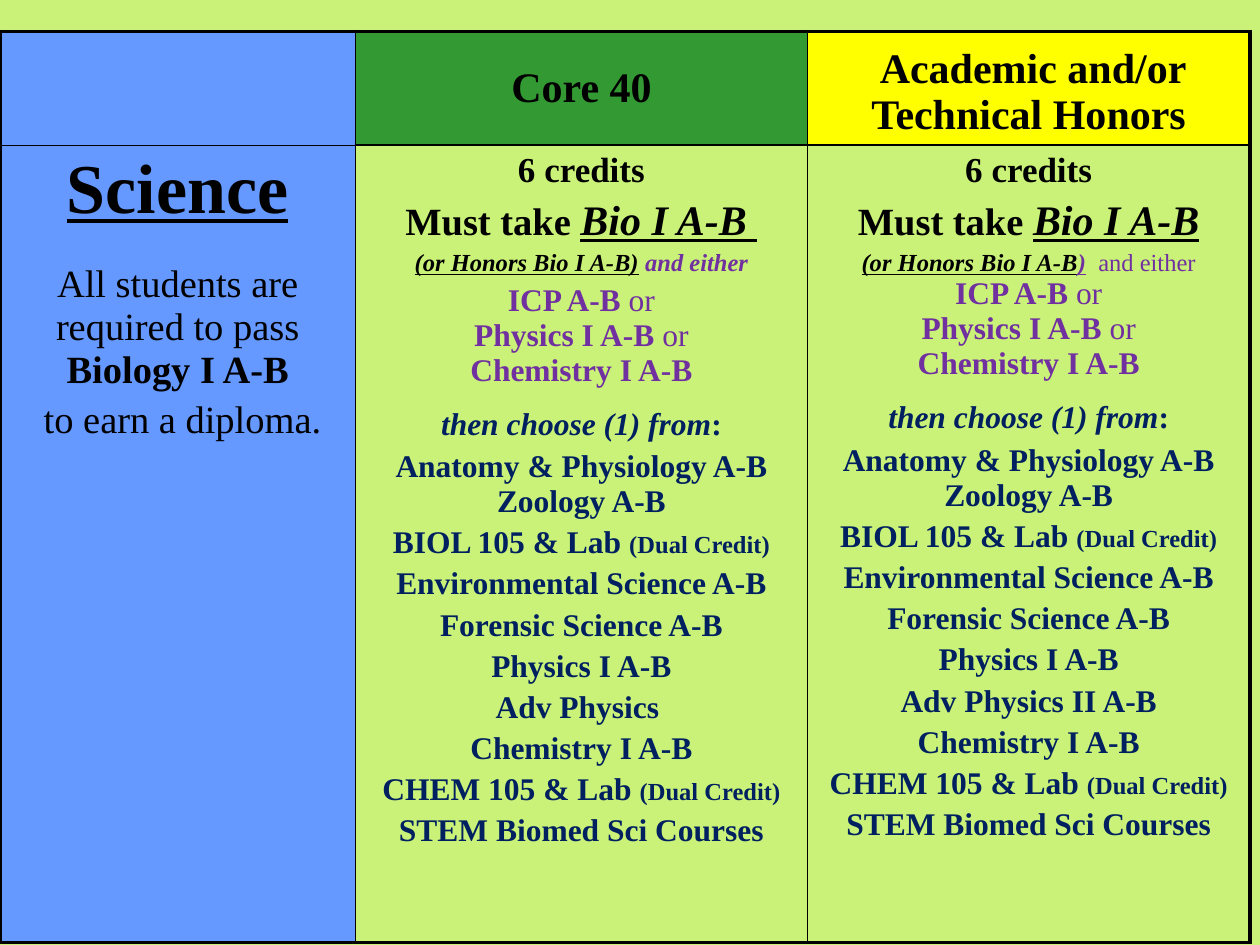
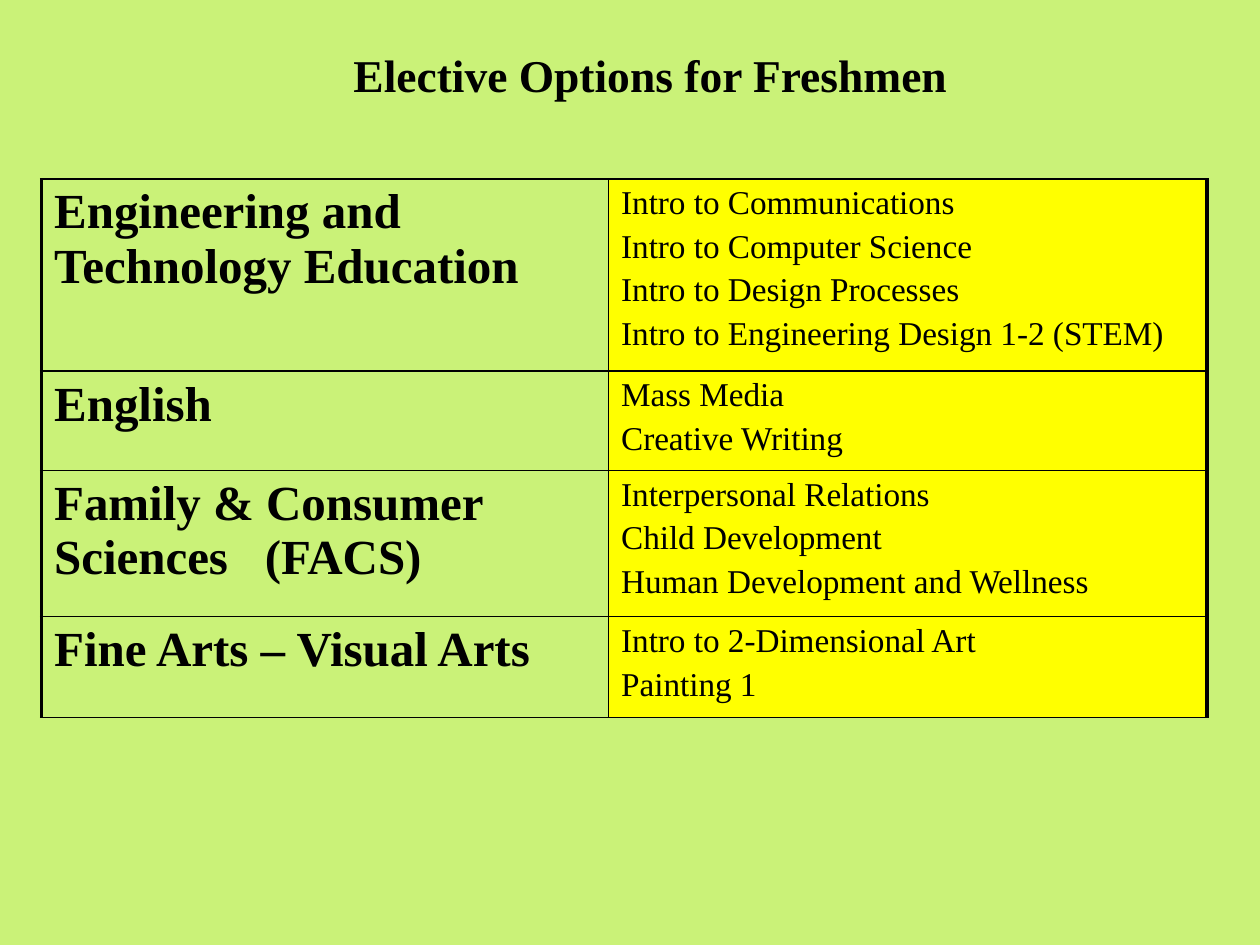
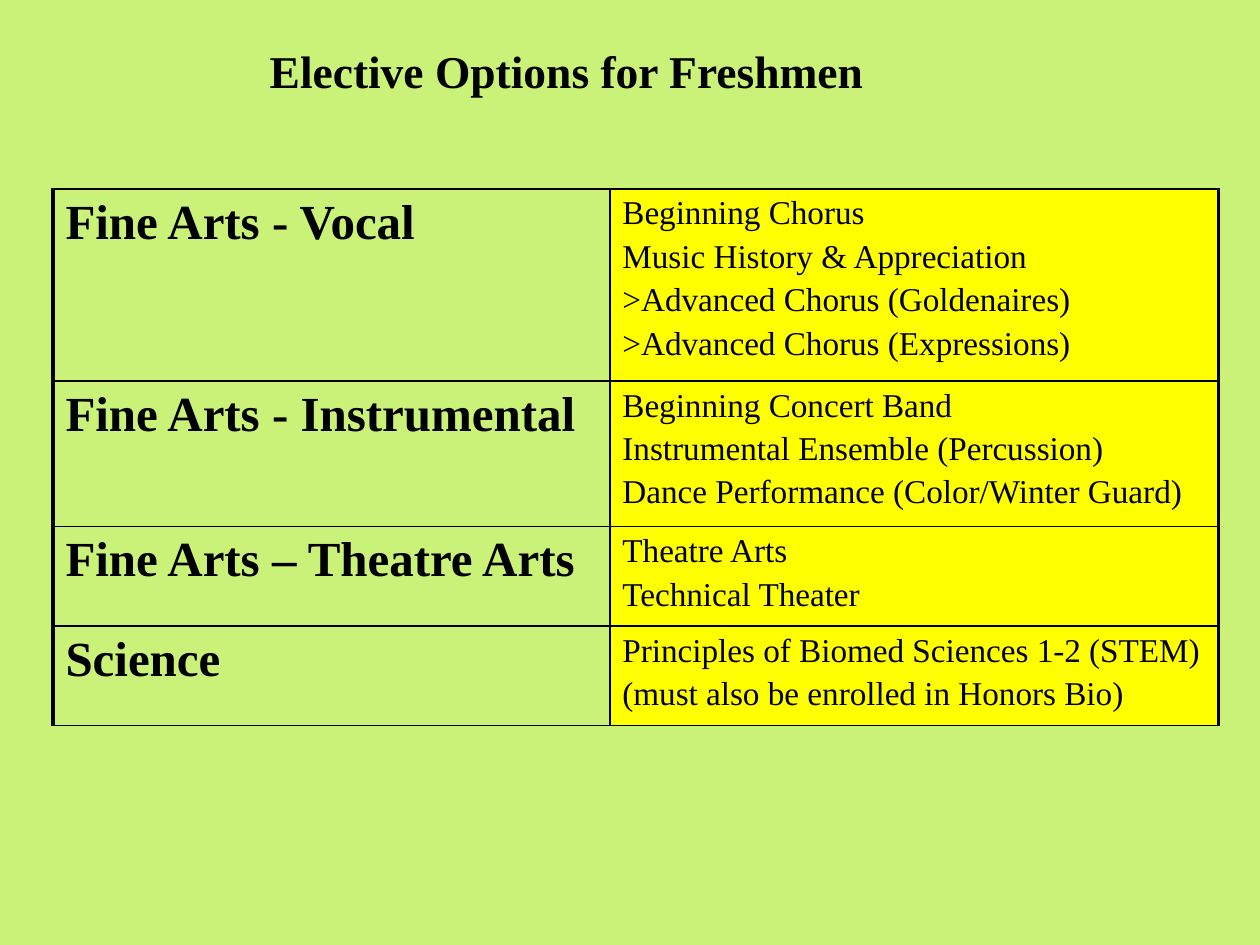
import dataclasses
import typing

import pptx
import pptx.dml.color
import pptx.enum.text
import pptx.oxml
import pptx.oxml.ns
import pptx.presentation
import pptx.slide
import pptx.table
import pptx.text.text
import pptx.util

Inches = pptx.util.Inches
Pt = pptx.util.Pt
Align = pptx.enum.text.PP_ALIGN
Anchor = pptx.enum.text.MSO_ANCHOR

FONT = "Times New Roman"
COLORS = {
    "background": "CAF278",
    "text": "000000",
    "border": "000000",
    "subject": "6699FF",
    "core": "339933",
    "highlight": "FFFF00",
    "either": "7030A0",
    "choice": "002060",
}
THICK, THIN, HAIR = 2.25, 1, 0.5
SPACE_BEFORE = 0.2  # share of the largest text size in the paragraph


class Run(typing.NamedTuple):
    text: str
    size: float
    bold: bool = True
    italic: bool = False
    underline: bool = False
    color: str = "text"


@dataclasses.dataclass
class Line:
    """A paragraph; before is its space in points, None for the usual share."""
    runs: list[Run]
    before: float | None = None


@dataclasses.dataclass
class Cell:
    lines: list[Line]
    fill: str | None = None
    align: Align = Align.LEFT
    anchor: Anchor = Anchor.TOP
    borders: dict[str, float] = dataclasses.field(default_factory=dict)


@dataclasses.dataclass
class Grid:
    left: float
    top: float
    widths: list[float]
    heights: list[float]
    rows: list[list[Cell]]
    outer_rule: float = THIN  # top and bottom edges


class Elective(typing.NamedTuple):
    subject: str
    courses: list[str]


@dataclasses.dataclass
class ElectiveSlide:
    title_box: tuple[float, float, float, float]
    left: float
    top: float
    widths: list[float]
    heights: list[float]
    electives: list[Elective]


def rgb(name: str) -> pptx.dml.color.RGBColor:
    return pptx.dml.color.RGBColor.from_string(COLORS[name])


def write_lines(frame: pptx.text.text.TextFrame, lines: list[Line], align: Align) -> None:
    for index, line in enumerate(lines):
        paragraph = frame.add_paragraph() if index else frame.paragraphs[0]
        paragraph.alignment = align
        before = line.before
        if before is None:
            before = SPACE_BEFORE * max(run.size for run in line.runs)
        paragraph.space_before = Pt(before if index else 0)
        for run in line.runs:
            text_run = paragraph.add_run()
            text_run.text = run.text
            formats = {
                "name": FONT,
                "size": Pt(run.size),
                "bold": run.bold,
                "italic": run.italic,
                "underline": run.underline,
            }
            for attribute, value in formats.items():
                setattr(text_run.font, attribute, value)
            text_run.font.color.rgb = rgb(run.color)


def set_borders(table_cell: pptx.table._Cell, widths: dict[str, float]) -> None:
    properties = table_cell._tc.get_or_add_tcPr()
    namespace = pptx.oxml.ns.nsdecls("a")
    for index, side in enumerate("LRTB"):
        properties.insert(index, pptx.oxml.parse_xml(
            f'<a:ln{side} {namespace} w="{Pt(widths[side])}"><a:solidFill>'
            f'<a:srgbClr val="{COLORS["border"]}"/></a:solidFill></a:ln{side}>'))


def add_grid(slide: pptx.slide.Slide, grid: Grid) -> None:
    last_row, last_column = len(grid.heights) - 1, len(grid.widths) - 1
    table = slide.shapes.add_table(
        last_row + 1, last_column + 1, Inches(grid.left), Inches(grid.top),
        Inches(sum(grid.widths)), Inches(sum(grid.heights))).table
    for flag in ("first_row", "horz_banding"):
        setattr(table, flag, False)
    for column, width in zip(table.columns, grid.widths):
        column.width = Inches(width)
    for row, height in zip(table.rows, grid.heights):
        row.height = Inches(height)
    for r, cells in enumerate(grid.rows):
        for c, cell in enumerate(cells):
            table_cell = table.cell(r, c)
            table_cell.vertical_anchor = cell.anchor
            if cell.fill:
                table_cell.fill.solid()
                table_cell.fill.fore_color.rgb = rgb(cell.fill)
            else:
                table_cell.fill.background()
            set_borders(table_cell, {
                "L": THIN if c else THICK,
                "R": THICK if c == last_column else THIN,
                "T": THIN if r else grid.outer_rule,
                "B": grid.outer_rule if r == last_row else THIN,
            } | cell.borders)
            write_lines(table_cell.text_frame, cell.lines, cell.align)


def add_title(slide: pptx.slide.Slide, box: tuple[float, float, float, float]) -> None:
    frame = slide.shapes.add_textbox(*map(Inches, box)).text_frame
    formats = {"word_wrap": True, "vertical_anchor": Anchor.TOP, "margin_top": Inches(0.04)}
    for attribute, value in formats.items():
        setattr(frame, attribute, value)
    write_lines(frame, [Line([Run("Elective Options for Freshmen", 26)])], Align.CENTER)


def either_line(course: str, before: float | None = 0, joined: bool = True) -> Line:
    """One of the alternative courses, followed by "or" when joined."""
    if not joined:
        return Line([Run(course, 18, color="either")], before)
    return Line([Run(course + " ", 18, color="either"),
                 Run("or", 18, bold=False, color="either")], before)


def choice_line(course: str, before: float | None = None, dual: bool = False) -> Line:
    if not dual:
        return Line([Run(course, 18, color="choice")], before)
    return Line([Run(course + " ", 18, color="choice"),
                 Run("(Dual Credit)", 14, color="choice")], before)


def science_cell(biology: str, honors: list[Run], icp_before: float | None,
                 advanced_course: str) -> Cell:
    return Cell([
        Line([Run("6 credits", 20)]),
        Line([Run("Must take ", 22), Run(biology, 24, italic=True, underline=True)]),
        Line(honors),
        either_line("ICP A-B", icp_before),
        either_line("Physics I A-B"),
        either_line("Chemistry I A-B", joined=False),
        Line([Run("then choose (1) from", 18, italic=True, color="choice"),
              Run(":", 18, color="choice")], 11),
        choice_line("Anatomy & Physiology A-B", 4.4),
        choice_line("Zoology A-B", 0),
        choice_line("BIOL 105 & Lab", dual=True),
        choice_line("Environmental Science A-B"),
        choice_line("Forensic Science A-B"),
        choice_line("Physics I A-B"),
        choice_line(advanced_course),
        choice_line("Chemistry I A-B"),
        choice_line("CHEM 105 & Lab", dual=True),
        choice_line("STEM Biomed Sci Courses"),
    ], align=Align.CENTER)


def build_science(slide: pptx.slide.Slide) -> None:
    subject = Cell([
        Line([Run("Science", 40, underline=True)]),
        Line([Run("All students are required to pass ", 22, bold=False),
              Run("Biology I A-B", 22)], 20),
        Line([Run(" to earn a diploma.", 22, bold=False)]),
    ], "subject", Align.CENTER, borders={"T": HAIR})
    core = science_cell("Bio I A-B ", [
        Run("(or Honors Bio I A-B)", 14, italic=True, underline=True),
        Run(" ", 14, italic=True),
        Run("and either", 14, italic=True, color="either"),
    ], None, "Adv Physics ")
    honors = science_cell("Bio I A-B", [
        Run("(or Honors Bio I A-B", 14, italic=True, underline=True),
        Run(")", 14, italic=True, underline=True, color="either"),
        Run("  ", 14, italic=True, color="either"),
        Run("and either", 14, bold=False, color="either"),
    ], 0, "Adv Physics II A-B")
    headers = [
        Cell([], "subject", borders={"B": HAIR}),
        Cell([Line([Run("Core 40", 24)])], "core", Align.CENTER, Anchor.MIDDLE),
        Cell([Line([Run(" Academic and/or Technical Honors", 24)])],
             "highlight", Align.CENTER, Anchor.BOTTOM),
    ]
    add_grid(slide, Grid(0, 0.25, [2.82, 3.59, 3.51], [0.9, 6.33],
                         [headers, [subject, core, honors]], THICK))


def build_electives(slide: pptx.slide.Slide, content: ElectiveSlide) -> None:
    rows = [[Cell([Line([Run(elective.subject, 28)])]),
             Cell([Line([Run(course, 19, bold=False)]) for course in elective.courses],
                  "highlight")]
            for elective in content.electives]
    add_title(slide, content.title_box)
    add_grid(slide, Grid(content.left, content.top, content.widths, content.heights, rows))


ELECTIVE_SLIDES = [
    ElectiveSlide((0.75, 0.33, 8.83, 0.54), 0.33, 1.42, [4.5, 4.75], [1.52, 0.79, 1.16, 0.8], [
        Elective("Engineering and Technology Education", [
            "Intro to Communications", "Intro to Computer Science",
            "Intro to Design Processes", "Intro to Engineering Design 1-2 (STEM)"]),
        Elective("English", ["Mass Media", "Creative Writing"]),
        Elective("Family & Consumer Sciences   (FACS)", [
            "Interpersonal Relations", "Child Development",
            "Human Development and Wellness"]),
        Elective("Fine Arts – Visual Arts", ["Intro to 2-Dimensional Art", "Painting 1"]),
    ]),
    ElectiveSlide((0, 0.3, 9, 1.25), 0.42, 1.5, [4.42, 4.83], [1.52, 1.15, 0.79, 0.79], [
        Elective("Fine Arts - Vocal", [
            "Beginning Chorus", "Music History & Appreciation",
            ">Advanced Chorus (Goldenaires)", ">Advanced Chorus (Expressions)"]),
        Elective("Fine Arts - Instrumental", [
            "Beginning Concert Band", "Instrumental Ensemble (Percussion)",
            "Dance Performance (Color/Winter Guard)"]),
        Elective("Fine Arts – Theatre Arts", ["Theatre Arts", "Technical Theater"]),
        Elective("Science", [
            "Principles of Biomed Sciences 1-2 (STEM)",
            "(must also be enrolled in Honors Bio)"]),
    ]),
]


def add_blank_slide(presentation: pptx.presentation.Presentation) -> pptx.slide.Slide:
    return presentation.slides.add_slide(presentation.slide_layouts[6])


def main() -> None:
    presentation = pptx.Presentation()
    presentation.slide_width = Inches(10)
    presentation.slide_height = Inches(7.5)
    background = presentation.slide_master.background.fill
    background.solid()
    background.fore_color.rgb = rgb("background")
    build_science(add_blank_slide(presentation))
    for content in ELECTIVE_SLIDES:
        build_electives(add_blank_slide(presentation), content)
    presentation.save("out.pptx")


if __name__ == "__main__":
    main()
